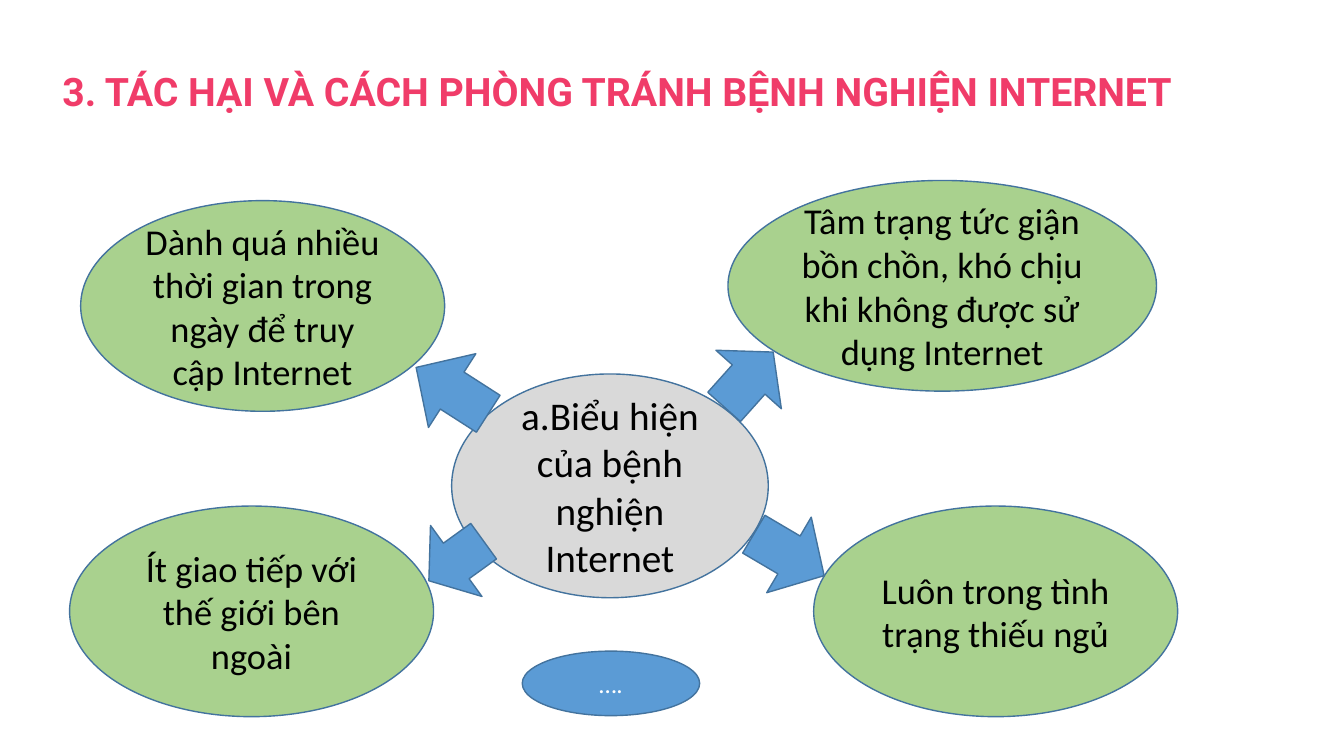
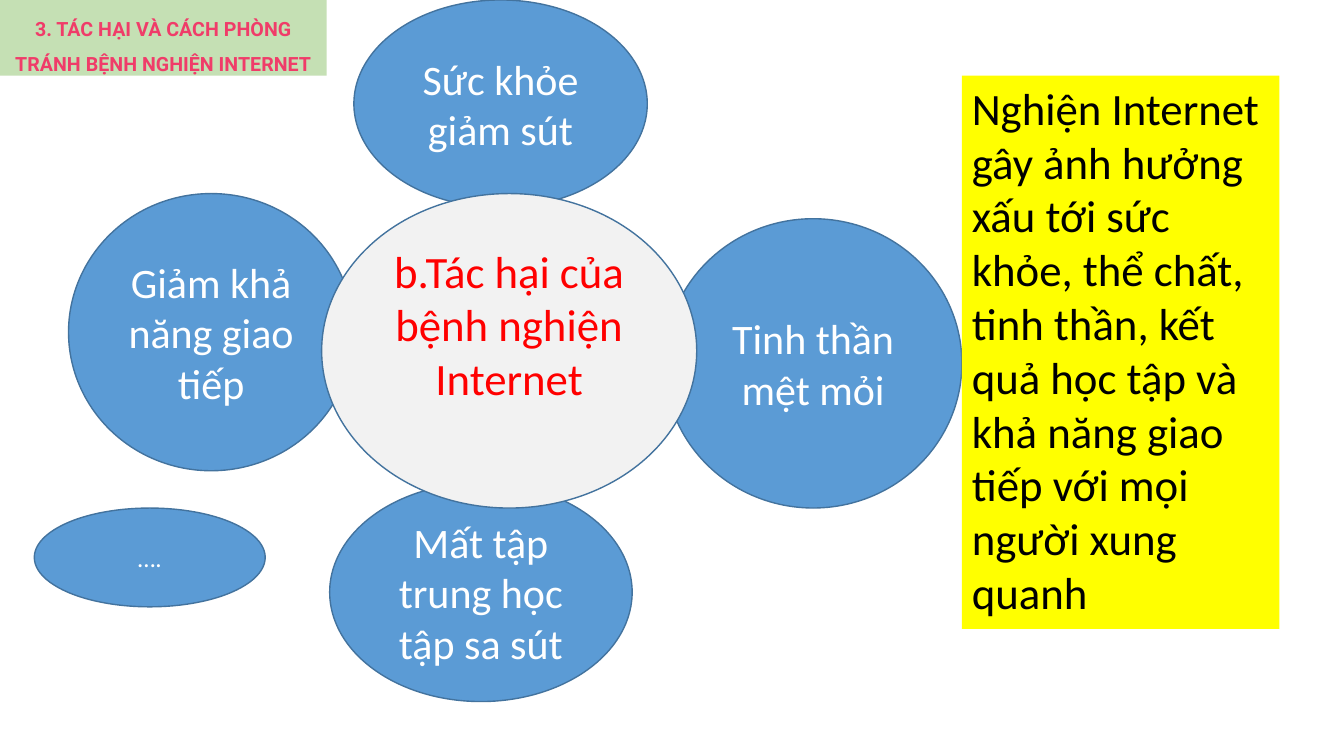
from pptx import Presentation
from pptx.dml.color import RGBColor
from pptx.enum.shapes import MSO_SHAPE as SHAPE
from pptx.enum.text import MSO_ANCHOR as ANCHOR, PP_ALIGN as ALIGN
from pptx.util import Inches, Pt

THEME = {
    "blue": "5B9BD5", "outline": "43739E", "green": "A9D18E",
    "pale_green": "C5E0B4", "grey": "D9D9D9", "light": "F2F2F2",
    "yellow": "FFFF00", "pink": "F03C69", "red": "FF0000",
    "black": "000000", "white": "FFFFFF",
    "body_font": "Calibri", "title_font": "Roboto",
    "title": 28, "tag": 14, "symptom": 26, "hub": 28,
    "harm": 30, "large": 32, "small": 18,
}
TITLE = "3. TÁC HẠI VÀ CÁCH PHÒNG TRÁNH BỆNH NGHIỆN INTERNET"
TITLE_STYLE = {"color": "pink", "font": "title_font", "bold": True, "spacing": 1.5}


def rgb(name):
    return RGBColor.from_string(THEME[name])


def add_block(s, kind, box, fill=None, line=None, text="", size="small",
              color="white", font="body_font", bold=False, spacing=1.0,
              align=ALIGN.CENTER, anchor=ANCHOR.MIDDLE, rotation=0):
    """Add a shape, or a text box when kind is None, and style its text."""
    box = [Inches(v) for v in box]
    sp = s.shapes.add_textbox(*box) if kind is None else s.shapes.add_shape(kind, *box)
    sp.rotation = rotation
    if kind is not None:
        sp.shadow.inherit = False
        sp.fill.solid()
        sp.fill.fore_color.rgb = rgb(fill)
        if line:
            sp.line.color.rgb = rgb(line)
            sp.line.width = Pt(1)
        else:
            sp.line.fill.background()
    if text:
        tf = sp.text_frame
        tf.word_wrap = True
        tf.vertical_anchor = anchor
        p = tf.paragraphs[0]
        p.alignment, p.line_spacing = align, spacing
        r = p.add_run()
        r.text = text
        look = {"name": THEME[font], "size": Pt(THEME[size]), "bold": bold}
        for key, value in look.items():
            setattr(r.font, key, value)
        r.font.color.rgb = rgb(color)
    return sp


prs = Presentation()
prs.slide_width, prs.slide_height = Inches(13.33), Inches(7.5)
blank = prs.slide_layouts[6]
bubble = {"kind": SHAPE.OVAL, "line": "outline"}

# Slide 1: symptoms around a hub
s = prs.slides.add_slide(blank)
add_block(s, None, (0.52, 0.39, 11.65, 0.7), text=TITLE, size="title",
          align=ALIGN.LEFT, anchor=ANCHOR.TOP, **TITLE_STYLE)
add_block(s, box=(4.48, 3.71, 3.14, 2.22), fill="grey", size="hub", color="black",
          text="a.Biểu hiện của bệnh nghiện Internet", **bubble)

symptoms = [
    (0.8, 1.99, 3.61, "Dành quá nhiều thời gian trong ngày để truy cập Internet"),
    (7.22, 1.79, 4.25, "Tâm trạng tức giận bồn chồn, khó chịu khi không được sử dụng Internet"),
    (8.07, 5.02, 3.61, "Luôn trong tình trạng thiếu ngủ"),
    (0.69, 5.02, 3.61, "Ít giao tiếp với thế giới bên ngoài"),
]
for x, y, w, text in symptoms:
    add_block(s, box=(x, y, w, 2.09), fill="green", size="symptom", color="black",
              text=text, **bubble)

# Arrows from the hub to each symptom
arrows = [(4.05, 3.45, 0.85, 302.7), (6.99, 3.4, 0.73, 41.8),
          (7.39, 5.1, 0.81, 120.5), (4.09, 5.23, 0.67, 234.1)]
for x, y, h, angle in arrows:
    add_block(s, SHAPE.UP_ARROW, (x, y, 0.87, h), "blue", "outline", rotation=angle)
add_block(s, box=(5.18, 6.46, 1.76, 0.64), fill="blue", text="….", **bubble)

# Slide 2: harms around a hub
s = prs.slides.add_slide(blank)
harms = [
    ((3.51, 0, 2.91, 2.06), "Sức khỏe giảm sút"),
    ((6.59, 2.17, 2.95, 2.87), "Tinh thần mệt mỏi"),
    ((3.27, 4.79, 3, 2.17), "Mất tập trung học tập sa sút"),
    ((0.68, 1.92, 2.83, 2.75), "Giảm khả năng giao tiếp"),
]
for box, text in harms:
    add_block(s, box=box, fill="blue", size="harm", text=text, **bubble)
hub = add_block(s, box=(3.19, 1.92, 3.72, 3.12), fill="light", size="large",
                color="red", text="b.Tác hại của bệnh nghiện Internet", **bubble)
hub.text_frame.margin_bottom = Inches(0.58)  # lifts the text above centre
add_block(s, box=(0.34, 5.04, 2.29, 0.98), fill="blue", text="….", **bubble)

# Conclusion panel and section tag
add_block(s, SHAPE.RECTANGLE, (9.54, 0.75, 3.15, 5.49), "yellow", size="large",
          color="black", align=ALIGN.LEFT, anchor=ANCHOR.TOP,
          text="Nghiện Internet gây ảnh hưởng xấu tới sức khỏe, thể chất, tinh thần, "
               "kết quả học tập và khả năng giao tiếp với mọi người xung quanh")
add_block(s, SHAPE.RECTANGLE, (0, 0, 3.24, 0.75), "pale_green", text=TITLE,
          size="tag", anchor=ANCHOR.TOP, **TITLE_STYLE)

prs.save("out.pptx")
